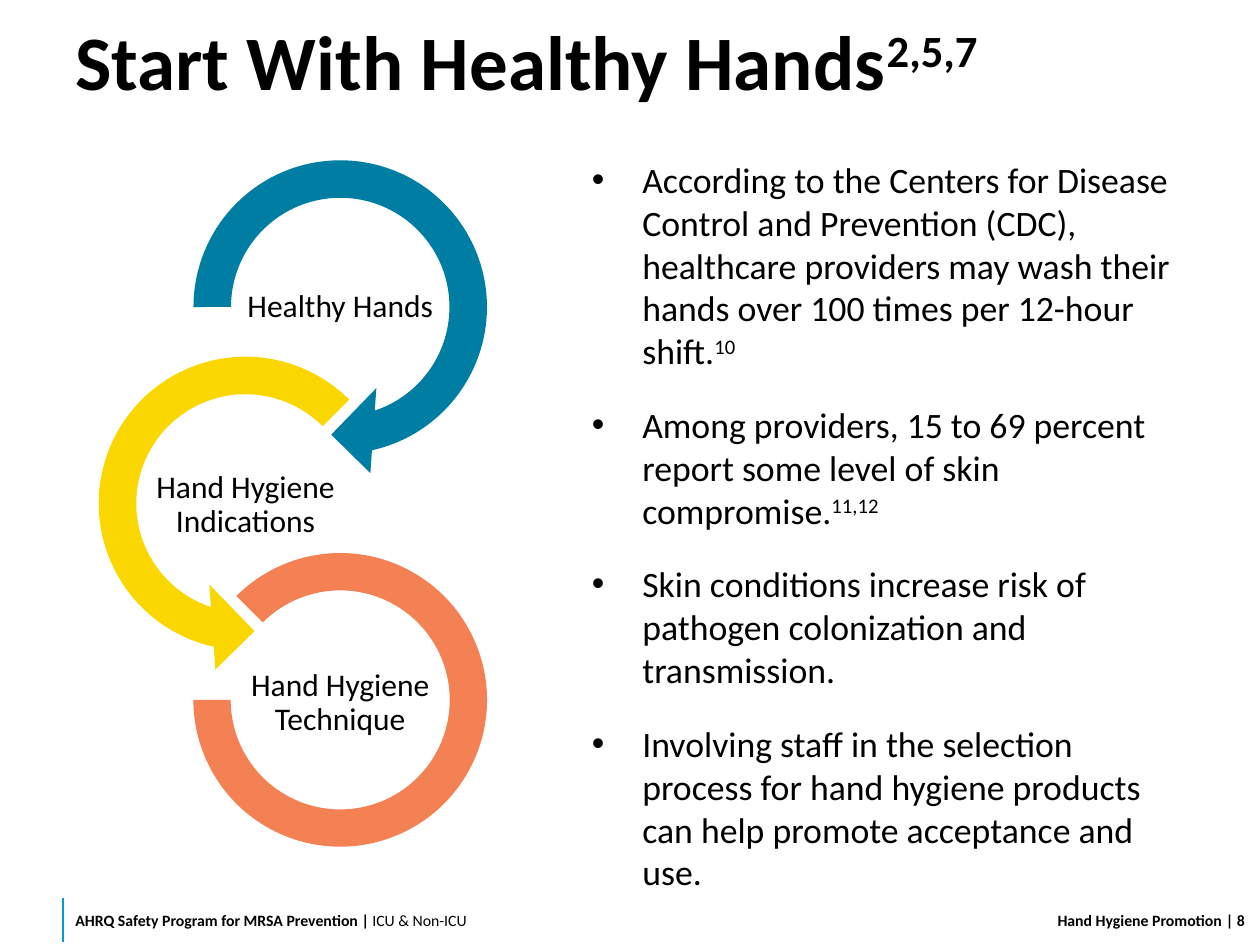
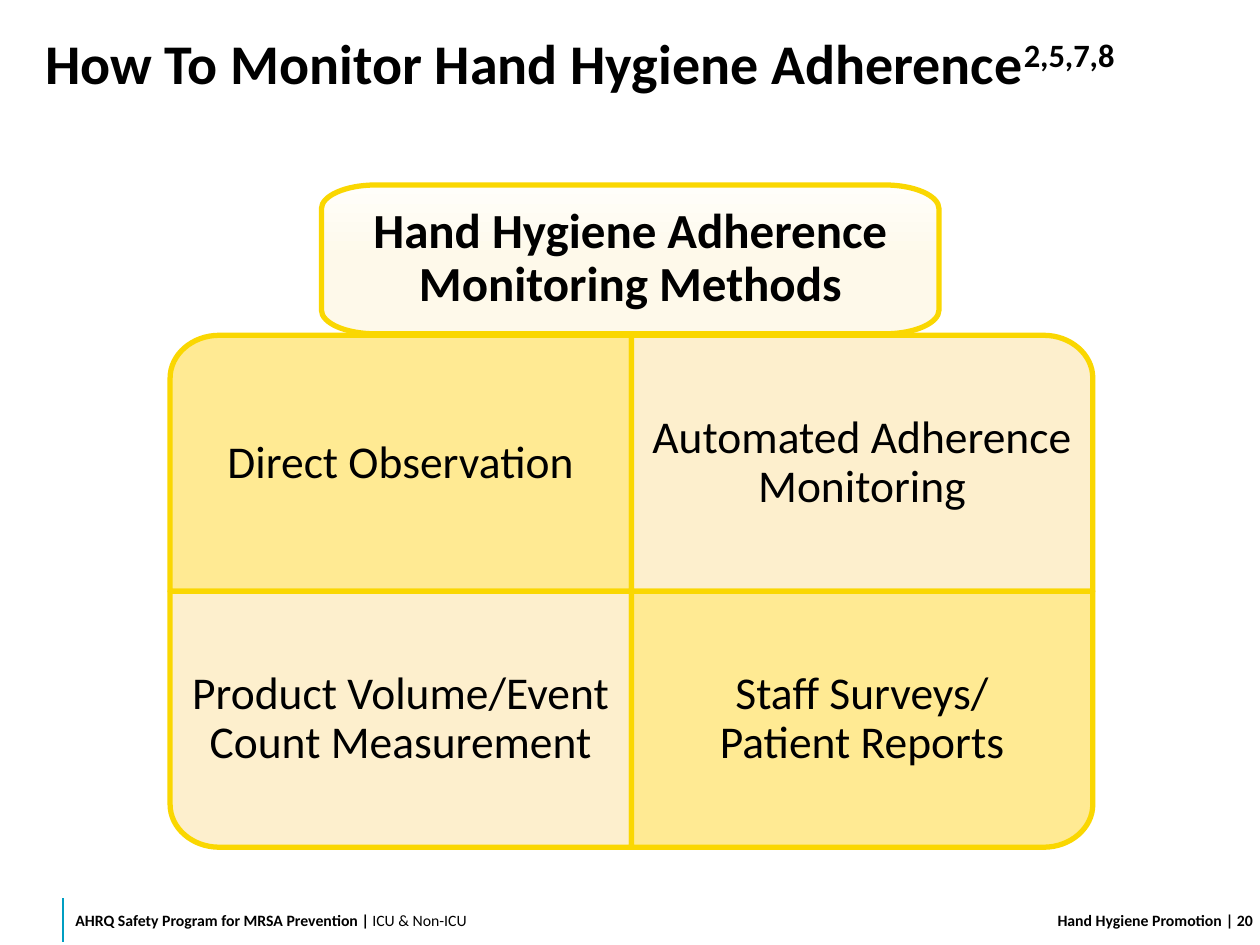
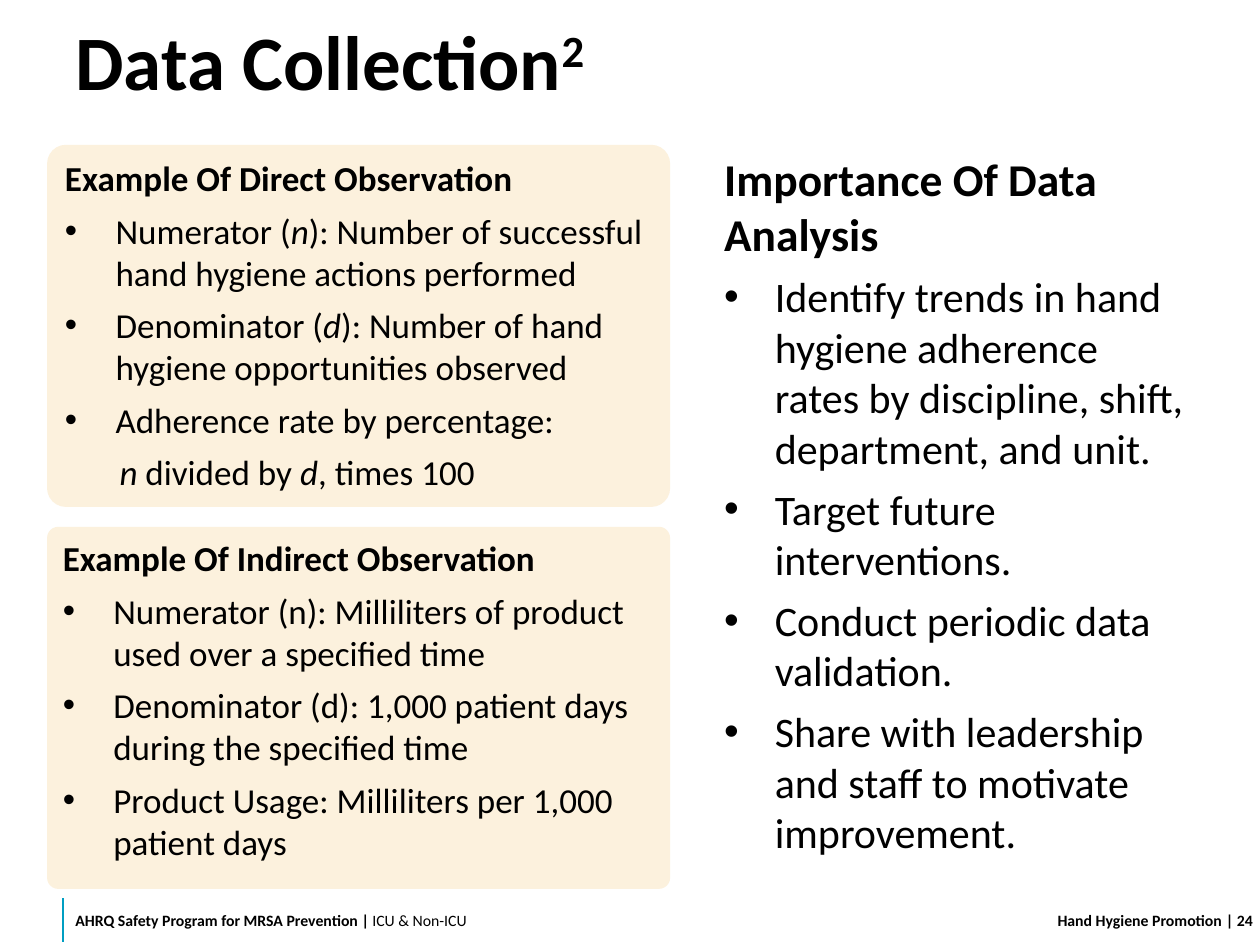
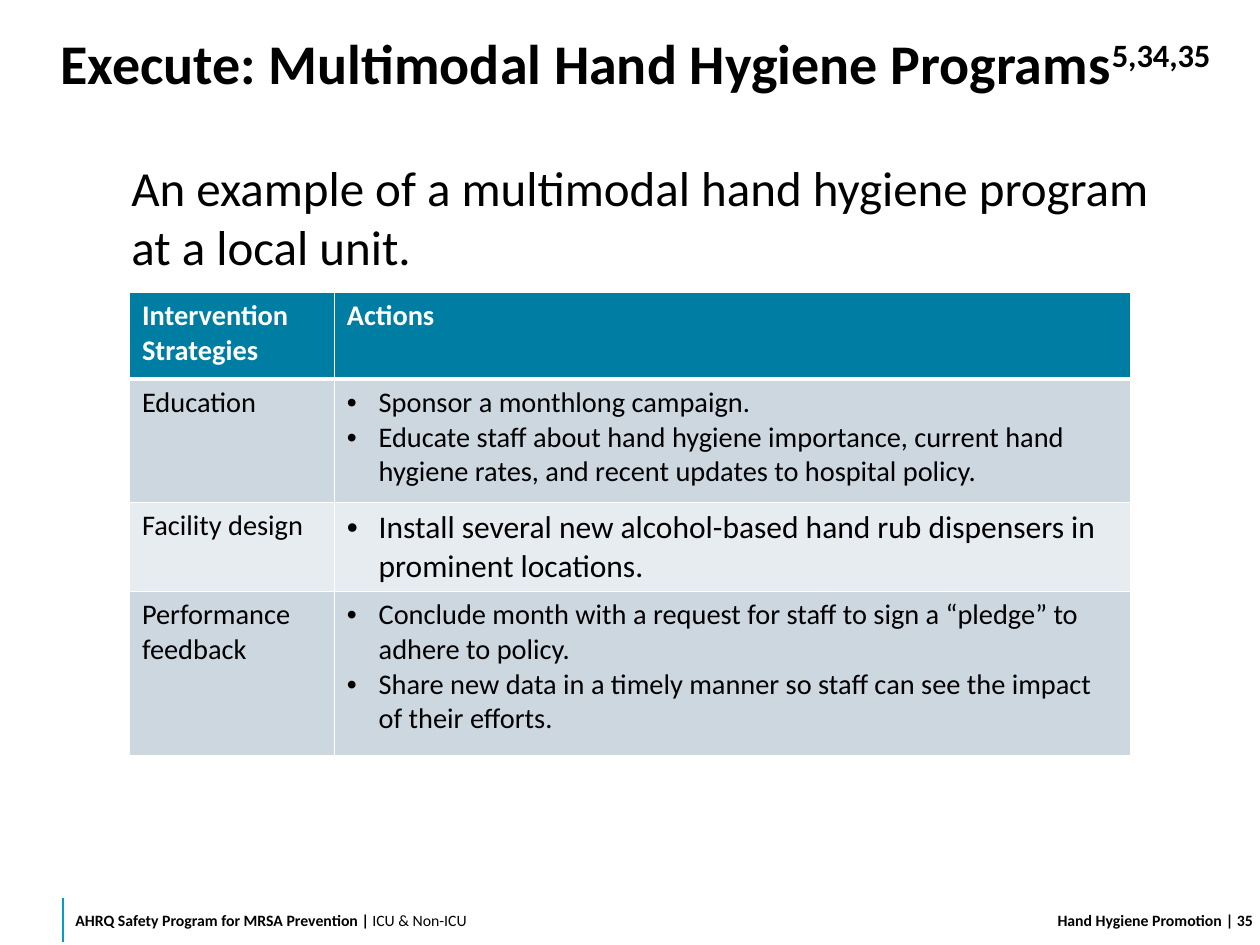
from copy import deepcopy
from dataclasses import dataclass

from lxml.etree import SubElement
from pptx import Presentation
from pptx.dml.color import RGBColor
from pptx.enum.shapes import MSO_CONNECTOR, MSO_SHAPE as Preset
from pptx.enum.text import MSO_ANCHOR as Anchor, PP_ALIGN as Align
from pptx.oxml.ns import qn
from pptx.util import Cm, Pt

FONT = "Calibri"
BLACK = RGBColor(0x00, 0x00, 0x00)
WHITE = RGBColor(0xFF, 0xFF, 0xFF)
RULE_BLUE = RGBColor(0x00, 0x9E, 0xC2)
TEAL = RGBColor(0x00, 0x7D, 0xA3)
YELLOW = RGBColor(0xFA, 0xD7, 0x01)
ORANGE = RGBColor(0xF4, 0x81, 0x54)
CELL_YELLOW = RGBColor(0xFF, 0xEA, 0x93)
CELL_CREAM = RGBColor(0xFD, 0xEF, 0xCD)
HEADER_TOP = RGBColor(0xFF, 0xFE, 0xFA)
HEADER_MIDDLE = RGBColor(0xFE, 0xF9, 0xEA)
HEADER_BOTTOM = RGBColor(0xFF, 0xF9, 0xE7)
CARD_CREAM = RGBColor(0xFC, 0xF1, 0xDD)
ROW_DARK = RGBColor(0xCC, 0xD7, 0xE0)
ROW_LIGHT = RGBColor(0xE7, 0xEC, 0xF0)

BODY_INSETS = (0.25, 0.13, 0.25, 0.13)
LIST_INDENT = 1.02
FOOTER_TOP, FOOTER_HEIGHT = 18.04, 1.02
CURVE_PULL = 0.55


@dataclass
class Line:
    content: object
    size: float
    bold: bool = False
    color: RGBColor = BLACK
    indent: float = 0
    bullet: bool = False
    before: float = 0
    align: Align = Align.LEFT
    spacing: float = 1.0


def bullets(contents, size, before, indent=LIST_INDENT):
    return [Line(content, size, indent=indent, bullet=True, before=before)
            for content in contents]


def sup(text):
    return text, "super"


def ital(text):
    return text, "italic"


def bold(text):
    return text, "bold"


def write_runs(paragraph, line):
    if isinstance(line.content, str):
        paragraph.text = line.content
        styles = [""] * len(paragraph.runs)
    else:
        styles = []
        for segment in line.content:
            text, style = (segment, "") if isinstance(segment, str) else segment
            paragraph.add_run().text = text
            styles.append(style)
    for run, style in zip(paragraph.runs, styles):
        run.font.name = FONT
        run.font.size = Pt(line.size)
        run.font.bold = line.bold or style == "bold"
        run.font.color.rgb = line.color
        if style == "italic":
            run.font.italic = True
        if style == "super":
            run._r.get_or_add_rPr().set("baseline", "30000")


def write_lines(text_frame, lines):
    for index, line in enumerate(lines):
        paragraph = text_frame.paragraphs[0] if index == 0 else text_frame.add_paragraph()
        properties = paragraph._p.get_or_add_pPr()
        if line.indent:
            properties.set("marL", str(Cm(line.indent)))
        if line.bullet:
            properties.set("indent", str(-Cm(line.indent)))
            SubElement(properties, qn("a:buFont")).set("typeface", "Arial")
            SubElement(properties, qn("a:buChar")).set("char", "•")
        paragraph.alignment = line.align
        paragraph.line_spacing = line.spacing
        paragraph.space_before = Pt(line.before if index else 0)
        write_runs(paragraph, line)


def set_text(shape, lines, insets=BODY_INSETS, anchor=Anchor.TOP):
    frame = shape.text_frame
    frame.word_wrap = True
    frame.vertical_anchor = anchor
    (frame.margin_left, frame.margin_top,
     frame.margin_right, frame.margin_bottom) = map(Cm, insets)
    write_lines(frame, lines)


def add_text(slide, box, lines, insets=BODY_INSETS, anchor=Anchor.TOP):
    set_text(slide.shapes.add_textbox(*map(Cm, box)), lines, insets, anchor)


def add_preset(slide, preset, box, color, adjustments):
    shape = slide.shapes.add_shape(preset, *map(Cm, box))
    shape.shadow.inherit = False
    shape.fill.solid()
    shape.fill.fore_color.rgb = color
    shape.line.fill.background()
    for index, value in enumerate(adjustments):
        shape.adjustments[index] = value
    return shape


def add_footer(slide, number):
    rule = slide.shapes.add_connector(
        MSO_CONNECTOR.STRAIGHT, Cm(1.27), Cm(18.11), Cm(1.27), Cm(18.99))
    rule.line.color.rgb = RULE_BLUE
    rule.line.width = Pt(1)
    SubElement(rule._element.spPr, qn("a:effectLst"))

    parts = (
        (1.27, 10.41, 0.25, 0.25,
         Line([bold("AHRQ Safety Program for MRSA Prevention | "), "ICU & Non-ICU"], 9)),
        (18.03, 6.6, 0.25, 0,
         Line("Hand Hygiene Promotion", 9, bold=True, align=Align.RIGHT)),
        (24.64, 0.76, 0, 0, Line(f" | {number}", 9, bold=True)),
    )
    for left, width, inset_left, inset_right, line in parts:
        add_text(slide, (left, FOOTER_TOP, width, FOOTER_HEIGHT), [line],
                 (inset_left, 0, inset_right, 0), Anchor.MIDDLE)


def new_slide(presentation, number, title, references, size=44, left=1.27, width=22.86):
    slide = presentation.slides.add_slide(presentation.slide_layouts[6])
    line = Line([title, sup(references)], size, bold=True, spacing=0.9)
    add_text(slide, (left, 0, width, 2.54), [line],
             (0.25, 0.25, 0.25, 0.13), Anchor.MIDDLE)
    add_footer(slide, number)
    return slide


def bend_corners(panel, curve_starts):
    outline = panel._element.find(".//" + qn("a:path"))
    segments = list(outline)
    for start in curve_starts:
        curve = outline.makeelement(qn("a:cubicBezTo"))
        segments[start].addprevious(curve)
        for segment in segments[start:start + 3]:
            curve.append(segment[0])
            outline.remove(segment)


def add_panel(slide, box, line, inset, radii=(0, 0), rounded=()):
    left, top, width, height = box
    radius_x, radius_y = radii
    corners = (
        ("top left", left, top, 1, 1),
        ("top right", left + width, top, -1, 1),
        ("bottom right", left + width, top + height, -1, -1),
        ("bottom left", left, top + height, 1, -1),
    )
    points, curve_starts = [], []
    for name, x, y, inward_x, inward_y in corners:
        if name not in rounded:
            points.append((x, y))
            continue
        reach_x, reach_y = radius_x * inward_x, radius_y * inward_y
        rest = 1 - CURVE_PULL
        side = [(x, y + reach_y), (x, y + reach_y * rest)]
        edge = [(x + reach_x, y), (x + reach_x * rest, y)]
        entry, leave = (side, edge) if inward_x == inward_y else (edge, side)
        curve_starts.append(len(points) + 1)
        points += entry + leave[::-1]
    points = [(Cm(x), Cm(y)) for x, y in points]
    builder = slide.shapes.build_freeform(*points[0])
    builder.add_line_segments(points[1:], close=True)
    panel = builder.convert_to_shape()
    bend_corners(panel, curve_starts)
    panel.shadow.inherit = False
    set_text(panel, [line], (inset,) * 4, Anchor.MIDDLE)
    return panel


def add_circle_chain(slide, left, top):
    arrow_size, arc_size = 6.88, 5.92
    pitch, label_pitch, zigzag = 3.96, 3.99, 1.91
    label_width, label_height = 3.88, 1.91
    links = (
        ("Healthy Hands", Preset.CIRCULAR_ARROW, arrow_size, TEAL,
         (0.11, 11.42, 45, 108, 0.125)),
        ("Hand Hygiene Indications", Preset.LEFT_CIRCULAR_ARROW, arrow_size, YELLOW,
         (0.11, 11.42, 63, 189, 0.125)),
        ("Hand Hygiene Technique", Preset.BLOCK_ARC, arc_size, ORANGE,
         (135, 108, 0.127)),
    )
    for index, (label, preset, size, color, adjustments) in enumerate(links):
        center_x = left + arrow_size / 2 + (zigzag if index % 2 == 0 else 0)
        first_y = top + arrow_size / 2
        center_y = first_y + index * pitch
        add_preset(slide, preset, (center_x - size / 2, center_y - size / 2, size, size),
                   color, adjustments)
        label_box = (center_x - label_width / 2,
                     first_y + index * label_pitch - label_height / 2,
                     label_width, label_height)
        panel = add_panel(slide, label_box,
                          Line(label, 18, align=Align.CENTER, spacing=0.9), 0.04)
        panel.fill.background()
        panel.line.fill.background()


def outline_yellow(panel):
    panel.line.color.rgb = YELLOW
    panel.line.width = Pt(3)


def fill_header(header):
    header.fill.gradient()
    header.fill.gradient_angle = 270
    stop_list = header._element.find(".//" + qn("a:gsLst"))
    stop_list.insert(1, deepcopy(stop_list[0]))
    colors = (HEADER_TOP, HEADER_MIDDLE, HEADER_BOTTOM)
    for index, (stop, color) in enumerate(zip(header.fill.gradient_stops, colors)):
        stop.position = index / 2
        stop.color.rgb = color


def add_method_matrix(slide, left, top):
    header_width, header_height, header_offset = 12.45, 3, 3.05
    cell_width, cell_height = 9.3, 5.16
    grid_top = top + header_height + 0.03
    methods = (
        ("Direct Observation", "top left"),
        ("Automated Adherence Monitoring", "top right"),
        ("Product Volume/Event Count Measurement", "bottom left"),
        ("Staff Surveys/\nPatient Reports", "bottom right"),
    )
    for index, (method, corner) in enumerate(methods):
        row, column = divmod(index, 2)
        box = (left + column * cell_width, grid_top + row * cell_height,
               cell_width, cell_height)
        line = Line(method, 26, align=Align.CENTER, spacing=0.9)
        panel = add_panel(slide, box, line, 0.4, (0.99, 0.86), (corner,))
        panel.fill.solid()
        panel.fill.fore_color.rgb = CELL_YELLOW if row == column else CELL_CREAM
        outline_yellow(panel)

    header = add_panel(
        slide, (left + header_offset, top, header_width, header_height),
        Line("Hand Hygiene Adherence\nMonitoring Methods", 28, bold=True,
             align=Align.CENTER, spacing=0.9),
        0.38, (1.09, 0.48), [corner for _, corner in methods])
    fill_header(header)
    outline_yellow(header)


def add_example_cards(slide, left, top):
    width, height, gap = 12.56, 7.3, 0.4
    cards = (
        ("Example Of Direct Observation", 0.052,
         (["Numerator (", ital("n"),
           "): Number of successful hand hygiene actions performed"],
          ["Denominator (", ital("d"),
           "): Number of hand hygiene opportunities observed"],
          "Adherence rate by percentage:"),
         [Line([ital("n"), " divided by ", ital("d"), ", times 100"],
               20, indent=1.1, before=6)]),
        ("Example Of Indirect Observation", 0.031,
         ("Numerator (n): Milliliters of product used over a specified time",
          "Denominator (d): 1,000 patient days during the specified time",
          "Product Usage: Milliliters per 1,000 patient days"),
         []),
    )
    for index, (heading, rounding, items, formula) in enumerate(cards):
        card = add_preset(slide, Preset.ROUNDED_RECTANGLE,
                          (left, top + index * (height + gap), width, height),
                          CARD_CREAM, (rounding,))
        set_text(card, [Line(heading, 20, bold=True), *bullets(items, 20, 6), *formula])


def set_borders(cell, top_width, bottom_width):
    properties = cell._tc.get_or_add_tcPr()
    for side, width in (("L", 1), ("R", 1), ("T", top_width), ("B", bottom_width)):
        border = SubElement(properties, qn(f"a:ln{side}"), w=str(Pt(width)))
        fill = SubElement(border, qn("a:solidFill"))
        SubElement(fill, qn("a:srgbClr")).set("val", str(WHITE))


def add_strategy_table(slide, left, top):
    columns, heights = (4.13, 16.05), (1.75, 2.49, 1.79, 3.31)
    text_size = 16.2
    strategies = (
        ("Education", text_size,
         ("Sponsor a monthlong campaign.",
          "Educate staff about hand hygiene importance, current hand hygiene rates, "
          "and recent updates to hospital policy.")),
        ("Facility design", 18,
         ("Install several new alcohol-based hand rub dispensers in prominent locations.",)),
        ("Performance feedback", text_size,
         ("Conclude month with a request for staff to sign a “pledge” to adhere to policy.",
          "Share new data in a timely manner so staff can see the impact of their efforts.")),
    )
    rows = [[[Line(heading, text_size, bold=True, color=WHITE)]
             for heading in ("Intervention Strategies", "Actions")]]
    rows += [[[Line(name, text_size)], bullets(actions, size, 0, 0.64)]
             for name, size, actions in strategies]
    fills = (TEAL, ROW_DARK, ROW_LIGHT, ROW_DARK)

    table = slide.shapes.add_table(
        len(heights), len(columns), Cm(left), Cm(top),
        Cm(sum(columns)), Cm(sum(heights))).table
    table.horz_banding = False
    for column, width in zip(table.columns, columns):
        column.width = Cm(width)
    for index, (cells, height, color) in enumerate(zip(rows, heights, fills)):
        table.rows[index].height = Cm(height)
        for cell, lines in zip(table.rows[index].cells, cells):
            set_borders(cell, 3 if index == 1 else 1, 3 if index == 0 else 1)
            cell.fill.solid()
            cell.fill.fore_color.rgb = color
            write_lines(cell.text_frame, lines)


def build_healthy_hands(presentation):
    slide = new_slide(presentation, 8, "Start With Healthy Hands", "2,5,7")
    add_circle_chain(slide, 1.51, 2.75)
    facts = (
        ["According to the Centers for Disease Control and Prevention (CDC), healthcare "
         "providers may wash their hands over 100 times per 12-hour shift.", sup("10")],
        ["Among providers, 15 to 69 percent report some level of skin compromise.",
         sup("11,12")],
        "Skin conditions increase risk of pathogen colonization and transmission.",
        "Involving staff in the selection process for hand hygiene products can help "
        "promote acceptance and use.",
    )
    add_text(slide, (11.68, 3.05, 12.45, 14.48), bullets(facts, 20.4, 17.6))


def build_monitoring(presentation):
    slide = new_slide(presentation, 20, "How To Monitor Hand Hygiene Adherence",
                      "2,5,7,8", size=32, left=0.66, width=24.61)
    add_method_matrix(slide, 3.43, 3.73)


def build_data_collection(presentation):
    slide = new_slide(presentation, 24, "Data Collection", "2")
    add_example_cards(slide, 0.95, 2.92)
    reasons = (
        "Identify trends in hand hygiene adherence rates by discipline, shift, "
        "department, and unit.",
        "Target future interventions.",
        "Conduct periodic data validation.",
        "Share with leadership and staff to motivate improvement.",
    )
    add_text(slide, (14.35, 2.92, 9.78, 14.53),
             [Line("Importance Of Data Analysis", 26, bold=True),
              *bullets(reasons, 24, 6)])


def build_programs(presentation):
    slide = new_slide(presentation, 35, "Execute: Multimodal Hand Hygiene Programs",
                      "5,34,35", size=32, left=0.97, width=24.13)
    add_text(slide, (2.4, 3.05, 21.54, 2.69),
             [Line("An example of a multimodal hand hygiene program at a local unit.", 28)])
    add_strategy_table(slide, 2.61, 5.89)


def main():
    presentation = Presentation()
    presentation.slide_width = Cm(25.4)
    presentation.slide_height = Cm(19.05)
    build_healthy_hands(presentation)
    build_monitoring(presentation)
    build_data_collection(presentation)
    build_programs(presentation)
    presentation.save("out.pptx")


if __name__ == "__main__":
    main()
